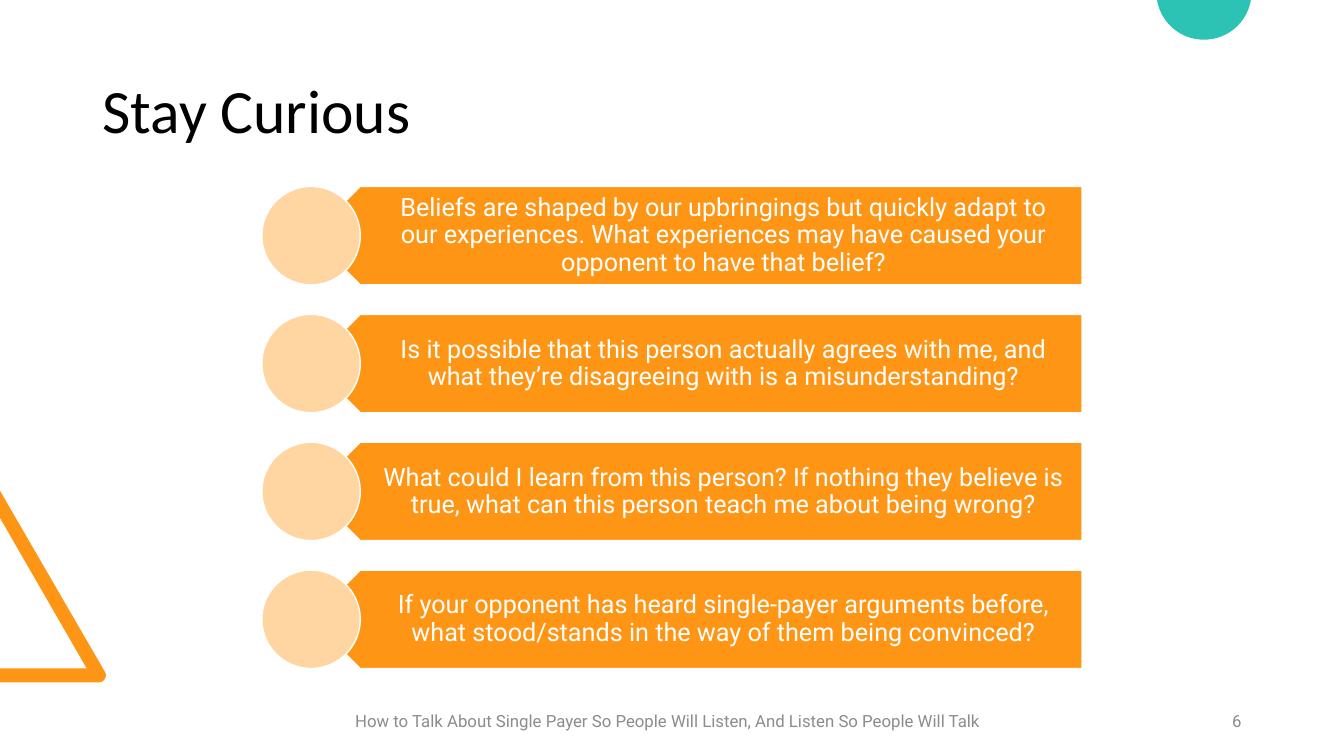
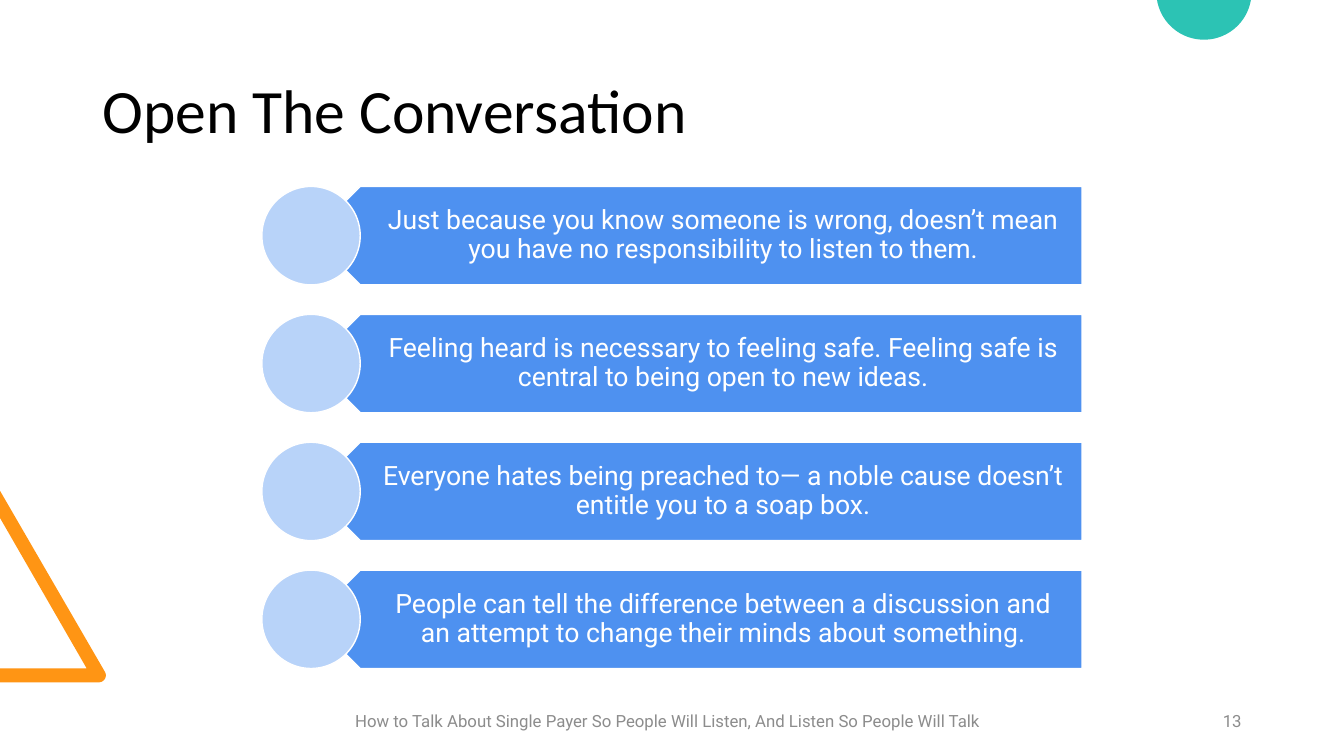
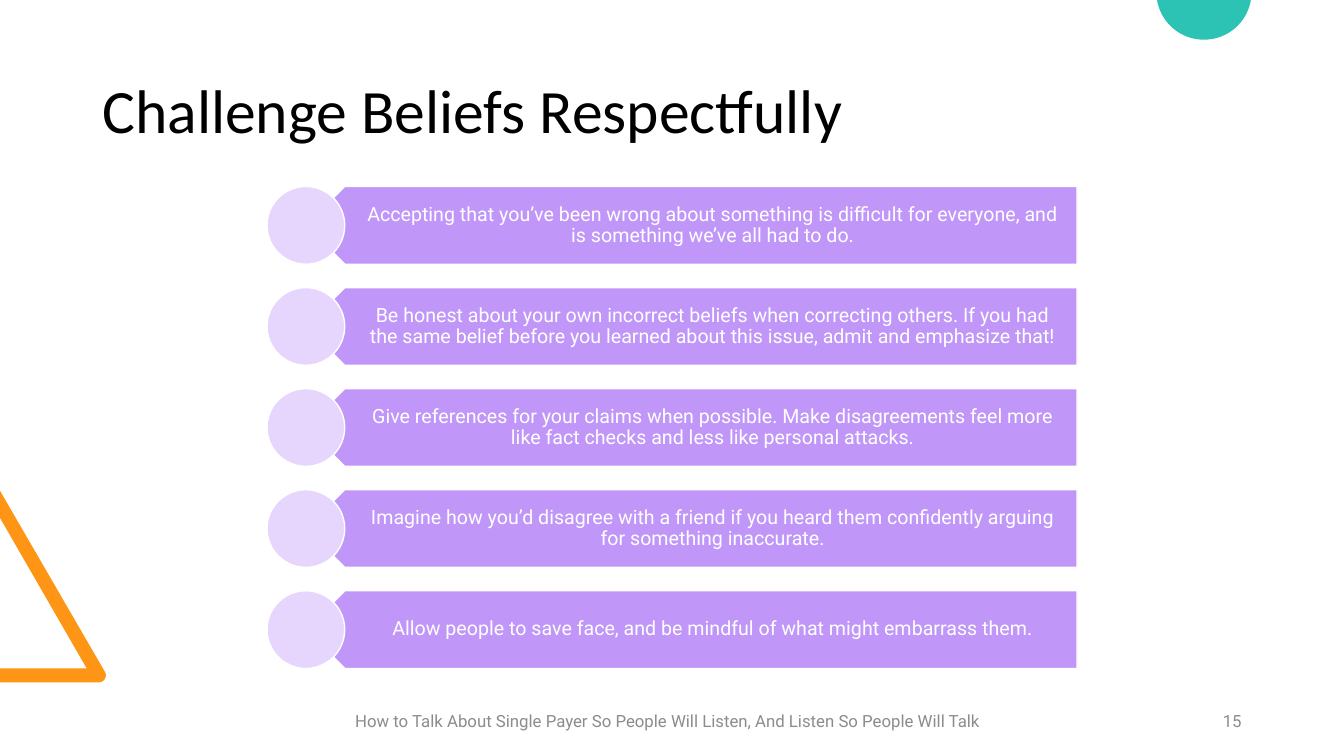
from math import asin, cos, degrees, radians, sin

from pptx import Presentation
from pptx.dml.color import RGBColor
from pptx.enum.shapes import MSO_SHAPE
from pptx.enum.text import MSO_ANCHOR, PP_ALIGN
from pptx.util import Pt

LEFT, CENTER, RIGHT = PP_ALIGN.LEFT, PP_ALIGN.CENTER, PP_ALIGN.RIGHT
MIDDLE = MSO_ANCHOR.MIDDLE
ARROW, CIRCLE = MSO_SHAPE.PENTAGON, MSO_SHAPE.OVAL

SLIDE_WIDTH, SLIDE_HEIGHT = 960, 540
TITLE_ONLY_LAYOUT = 5

TITLE_FONT, BODY_FONT = "Calibri", "Roboto"
WHITE, BLACK, GREY = "FFFFFF", "000000", "8C8C8C"
ORANGE, LIGHT_ORANGE = "FF9514", "FFD5A1"
BLUE, LIGHT_BLUE = "4E91F0", "B8D3F9"
PURPLE, LIGHT_PURPLE = "C097F8", "E6D5FC"
TEAL = "2CC3B4"

FOOTER = "How to Talk About Single Payer So People Will Listen, And Listen So People Will Talk"

LIST_TOP, LIST_HEIGHT = 133.2, 344.3
ARROW_WIDTH = 550.8
GAP_RATIO = 0.3

SLIDES = [
    {
        "title": "Stay Curious",
        "number": 6,
        "color": ORANGE,
        "light_color": LIGHT_ORANGE,
        "size": 18,
        "items": [
            "Beliefs are shaped by our upbringings but quickly adapt to our experiences. "
            "What experiences may have caused your opponent to have that belief?",
            "Is it possible that this person actually agrees with me, and what they’re "
            "disagreeing with is a misunderstanding?",
            "What could I learn from this person? If nothing they believe is true, "
            "what can this person teach me about being wrong?",
            "If your opponent has heard single-payer arguments before, what "
            "stood/stands in the way of them being convinced?",
        ],
    },
    {
        "title": "Open The Conversation",
        "number": 13,
        "color": BLUE,
        "light_color": LIGHT_BLUE,
        "size": 19,
        "items": [
            "Just because you know someone is wrong, doesn’t mean you have no "
            "responsibility to listen to them.",
            "Feeling heard is necessary to feeling safe. Feeling safe is central to "
            "being open to new ideas.",
            "Everyone hates being preached to— a noble cause doesn’t entitle you to a soap box.",
            "People can tell the difference between a discussion and an attempt to "
            "change their minds about something.",
        ],
    },
    {
        "title": "Challenge Beliefs Respectfully",
        "number": 15,
        "color": PURPLE,
        "light_color": LIGHT_PURPLE,
        "size": 14,
        "items": [
            "Accepting that you’ve been wrong about something is difficult for everyone, "
            "and is something we’ve all had to do.",
            "Be honest about your own incorrect beliefs when correcting others. If you had "
            "the same belief before you learned about this issue, admit and emphasize that!",
            "Give references for your claims when possible. Make disagreements feel more "
            "like fact checks and less like personal attacks.",
            "Imagine how you’d disagree with a friend if you heard them confidently "
            "arguing for something inaccurate.",
            "Allow people to save face, and be mindful of what might embarrass them.",
        ],
    },
]


def rgb(color):
    return RGBColor.from_string(color)


def box(left, top, width, height):
    return Pt(left), Pt(top), Pt(width), Pt(height)


def write_text(shape, text, *, size, color, font=BODY_FONT, align=LEFT,
               line_spacing=1.0, insets=(7.2, 3.6, 7.2, 3.6)):
    """Fill a shape with one paragraph; insets are left, top, right, bottom."""
    frame = shape.text_frame
    frame.word_wrap = True
    frame.vertical_anchor = MIDDLE
    (frame.margin_left, frame.margin_top,
     frame.margin_right, frame.margin_bottom) = map(Pt, insets)
    paragraph = frame.paragraphs[0]
    paragraph.alignment = align
    paragraph.line_spacing = line_spacing
    run = paragraph.add_run()
    run.text = text
    run.font.name = font
    run.font.size = Pt(size)
    run.font.color.rgb = rgb(color)


def paint(shape, fill, line=None):
    shape.shadow.inherit = False
    shape.fill.solid()
    shape.fill.fore_color.rgb = rgb(fill)
    if line:
        shape.line.color.rgb = rgb(line)
        shape.line.width = Pt(1)
    else:
        shape.line.fill.background()


def arc_points(center_x, center_y, radius, start, end, steps=48):
    """Points along an arc, with angles in degrees clockwise from the right."""
    angles = [radians(start + (end - start) * step / steps) for step in range(steps + 1)]
    return [(center_x + radius * cos(angle), center_y + radius * sin(angle)) for angle in angles]


def add_outline(slide, points, color):
    corners = [(Pt(x), Pt(y)) for x, y in points]
    builder = slide.shapes.build_freeform(*corners[0])
    builder.add_line_segments(corners[1:], close=True)
    paint(builder.convert_to_shape(), color)


def add_decorations(slide):
    triangle = [(0, 487.4), (0, 477.4), (61.9, 477.4), (0, 370), (0, 350.6)]
    add_outline(slide, triangle + arc_points(70.6, 482.4, 5, -30, 90), ORANGE)
    radius, center_y = 34, -5.6
    start = degrees(asin(-center_y / radius))
    add_outline(slide, arc_points(860, center_y, radius, start, 180 - start), TEAL)


def add_title(slide, text):
    title = slide.shapes.title
    title.left, title.top, title.width, title.height = box(66, 28.8, 828, 104.4)
    write_text(title, text, size=44, color=BLACK, font=TITLE_FONT, line_spacing=0.9)


def add_footer(slide, number):
    for text, left, width, align in ((str(number), 678, 216, RIGHT), (FOOTER, 84, 786, CENTER)):
        footer = slide.shapes.add_textbox(*box(left, 500.5, width, 28.8))
        write_text(footer, text, size=12, color=GREY, align=align)


def add_arrow_list(slide, items, color, light_color, size):
    """Stack the items evenly, each an arrow pointing left at a circle."""
    height = LIST_HEIGHT / (len(items) + GAP_RATIO * (len(items) - 1))
    circle_left = (SLIDE_WIDTH - ARROW_WIDTH - height / 2) / 2
    arrow_left = circle_left + height / 2
    point = height / 4
    insets = (0.44 * height, 0.28 * size, 0.56 * size, 0.28 * size)
    shapes = slide.shapes.add_group_shape().shapes
    for index, item in enumerate(items):
        top = LIST_TOP + index * height * (1 + GAP_RATIO)
        arrow = shapes.add_shape(ARROW, *box(arrow_left, top, ARROW_WIDTH, height))
        arrow.rotation = 180
        paint(arrow, color, WHITE)
        label = shapes.add_textbox(*box(arrow_left + point, top, ARROW_WIDTH - point, height))
        write_text(label, item, size=size, color=WHITE, align=CENTER,
                   line_spacing=0.9, insets=insets)
        circle = shapes.add_shape(CIRCLE, *box(circle_left, top, height, height))
        paint(circle, light_color, WHITE)


def main():
    presentation = Presentation()
    presentation.slide_width, presentation.slide_height = Pt(SLIDE_WIDTH), Pt(SLIDE_HEIGHT)
    layout = presentation.slide_layouts[TITLE_ONLY_LAYOUT]
    for content in SLIDES:
        slide = presentation.slides.add_slide(layout)
        add_decorations(slide)
        add_title(slide, content["title"])
        add_footer(slide, content["number"])
        add_arrow_list(slide, content["items"], content["color"],
                       content["light_color"], content["size"])
    presentation.save("out.pptx")


if __name__ == "__main__":
    main()
